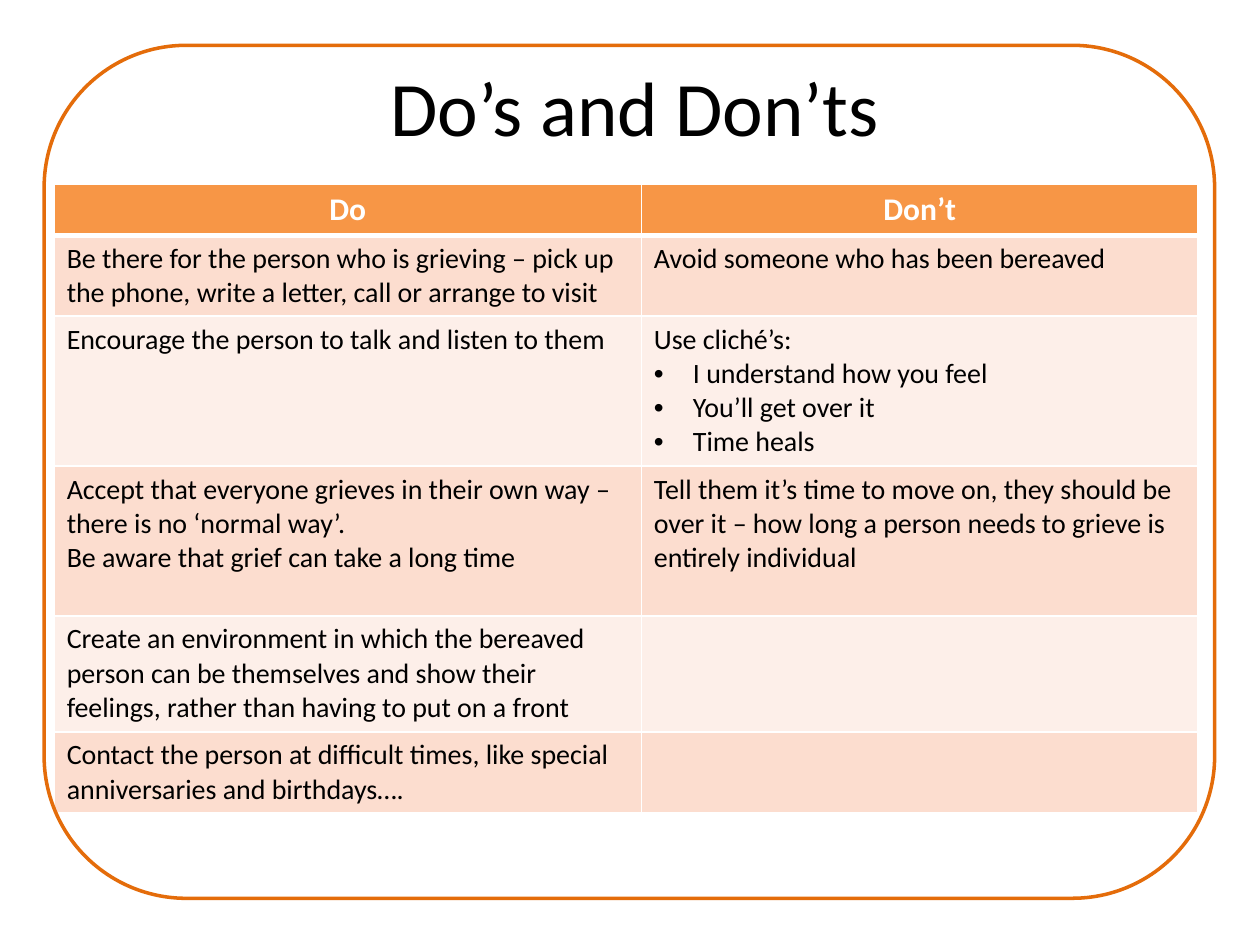
"""Build a slide that sets out do's and don'ts for supporting a bereaved person."""
from dataclasses import dataclass

from lxml.etree import SubElement
from pptx import Presentation
from pptx.dml.color import RGBColor
from pptx.enum.shapes import MSO_SHAPE
from pptx.enum.text import MSO_ANCHOR, PP_ALIGN
from pptx.oxml.ns import qn
from pptx.util import Inches, Pt


@dataclass(frozen=True)
class Theme:
    font: str = "Calibri"
    text: str = "000000"
    white: str = "FFFFFF"
    header: str = "F79646"
    bands: tuple = ("FCDDCF", "FDEFE9")
    frame: str = "E46C0A"
    title_size: int = 44
    header_size: int = 18
    body_size: int = 16
    rule: int = 1
    header_rule: int = 3
    frame_width: int = 2


BULLET = "• "
HEADINGS = ("Do", "Don’t")
ADVICE = (
    (["Be there for the person who is grieving – pick up the phone, write a letter, call or arrange to visit"],
     ["Avoid someone who has been bereaved"]),
    (["Encourage the person to talk and listen to them"],
     ["Use cliché’s:", "• I understand how you feel", "• You’ll get over it", "• Time heals"]),
    (["Accept that everyone grieves in their own way – there is no ‘normal way’.",
      "Be aware that grief can take a long time"],
     ["Tell them it’s time to move on, they should be over it – how long a person needs to grieve is "
      "entirely individual"]),
    (["Create an environment in which the bereaved person can be themselves and show their feelings, "
      "rather than having to put on a front"], []),
    (["Contact the person at difficult times, like special anniversaries and birthdays…."], []),
)
COLUMN_WIDTHS = (4.66, 4.42)
ROW_HEIGHTS = (0.41, 0.64, 1.19, 1.19, 0.92, 0.64)


class SlideBuilder:
    def __init__(self, slide, theme):
        self.slide = slide
        self.theme = theme

    def add_text(self, paragraph, text, size, color, bold=False, align=PP_ALIGN.LEFT):
        paragraph.alignment = align
        if text.startswith(BULLET):
            self.bullet(paragraph)
            text = text.removeprefix(BULLET)
        run = paragraph.add_run()
        run.text = text
        run.font.name = self.theme.font
        run.font.size = Pt(size)
        run.font.bold = bold
        run.font.color.rgb = RGBColor.from_string(color)

    def bullet(self, paragraph):
        properties = paragraph._p.get_or_add_pPr()
        indent = Inches(0.31)
        properties.set("marL", str(indent))
        properties.set("indent", str(-indent))
        SubElement(properties, qn("a:buFont"), typeface="Arial")
        SubElement(properties, qn("a:buChar"), char=BULLET.strip())

    def title(self, text, left, top, width, height):
        shape = self.slide.shapes.add_textbox(Inches(left), Inches(top), Inches(width), Inches(height))
        frame = shape.text_frame
        frame.word_wrap = True
        frame.vertical_anchor = MSO_ANCHOR.MIDDLE
        self.add_text(frame.paragraphs[0], text, self.theme.title_size, self.theme.text, align=PP_ALIGN.CENTER)

    def borders(self, cell, top, bottom):
        properties = cell._tc.get_or_add_tcPr()
        rule = self.theme.rule
        for side, width in (("L", rule), ("R", rule), ("T", top), ("B", bottom)):
            line = SubElement(properties, qn(f"a:ln{side}"), w=str(Pt(width)))
            fill = SubElement(line, qn("a:solidFill"))
            SubElement(fill, qn("a:srgbClr"), val=self.theme.white)

    def cell(self, cell, lines, row):
        theme = self.theme
        is_header = row == 0
        self.borders(cell, theme.header_rule if row == 1 else theme.rule,
                     theme.header_rule if is_header else theme.rule)
        cell.fill.solid()
        color = theme.header if is_header else theme.bands[(row - 1) % 2]
        cell.fill.fore_color.rgb = RGBColor.from_string(color)
        frame = cell.text_frame
        for index, text in enumerate(lines):
            paragraph = frame.add_paragraph() if index else frame.paragraphs[0]
            if is_header:
                self.add_text(paragraph, text, theme.header_size, theme.white, True, PP_ALIGN.CENTER)
            else:
                self.add_text(paragraph, text, theme.body_size, theme.text)

    def table(self, rows, left, top, widths, heights):
        table = self.slide.shapes.add_table(
            len(rows), len(widths), Inches(left), Inches(top),
            Inches(sum(widths)), Inches(sum(heights))).table
        for column, width in zip(table.columns, widths):
            column.width = Inches(width)
        for row, (contents, height) in enumerate(zip(rows, heights)):
            table.rows[row].height = Inches(height)
            for column, lines in enumerate(contents):
                self.cell(table.cell(row, column), lines, row)

    def frame(self, left, top, width, height):
        shape = self.slide.shapes.add_shape(
            MSO_SHAPE.ROUNDED_RECTANGLE, Inches(left), Inches(top), Inches(width), Inches(height))
        shape.shadow.inherit = False
        shape.fill.background()
        shape.line.color.rgb = RGBColor.from_string(self.theme.frame)
        shape.line.width = Pt(self.theme.frame_width)


def main():
    presentation = Presentation()
    presentation.slide_width = Inches(10)
    presentation.slide_height = Inches(7.5)
    slide = presentation.slides.add_slide(presentation.slide_layouts[6])
    builder = SlideBuilder(slide, Theme())
    builder.title("Do’s and Don’ts", 0.54, 0.21, 9, 1.25)
    headings = tuple([heading] for heading in HEADINGS)
    builder.table((headings, *ADVICE), 0.43, 1.46, COLUMN_WIDTHS, ROW_HEIGHTS)
    builder.frame(0.35, 0.36, 9.29, 6.77)
    presentation.save("out.pptx")


if __name__ == "__main__":
    main()
